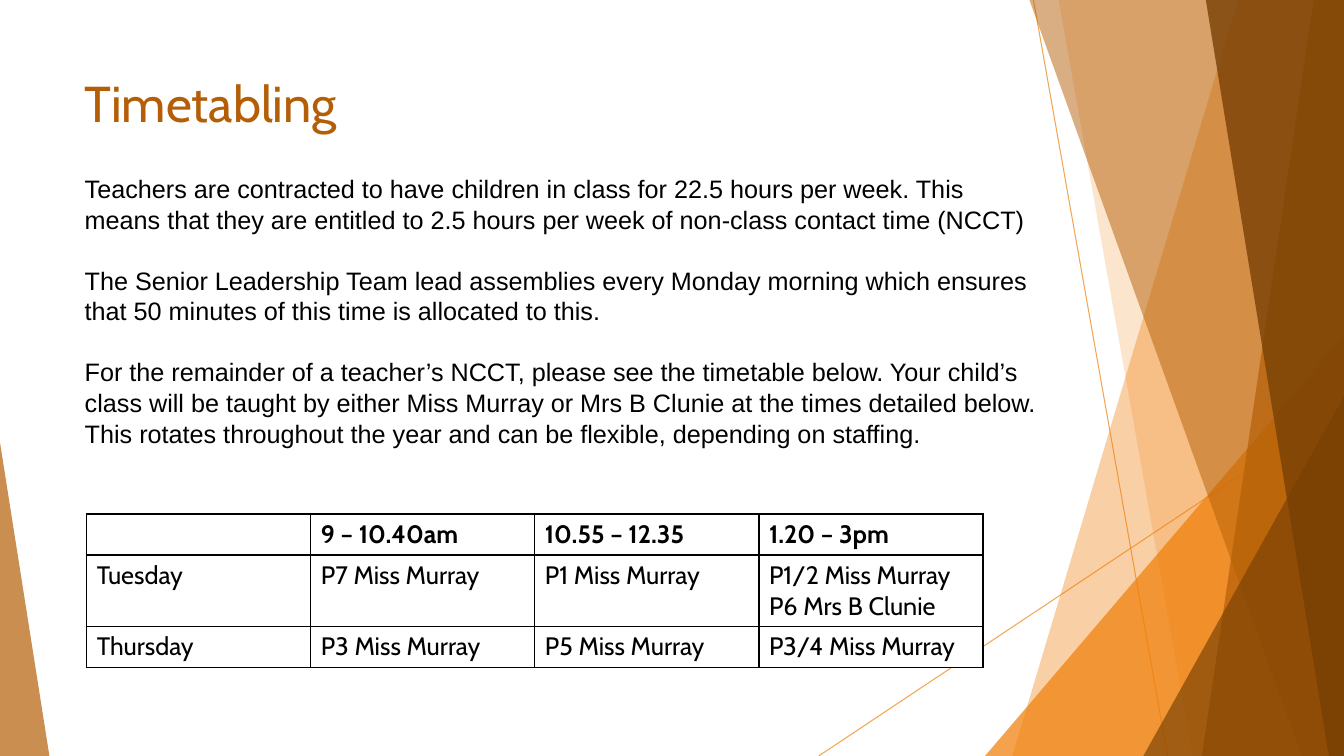
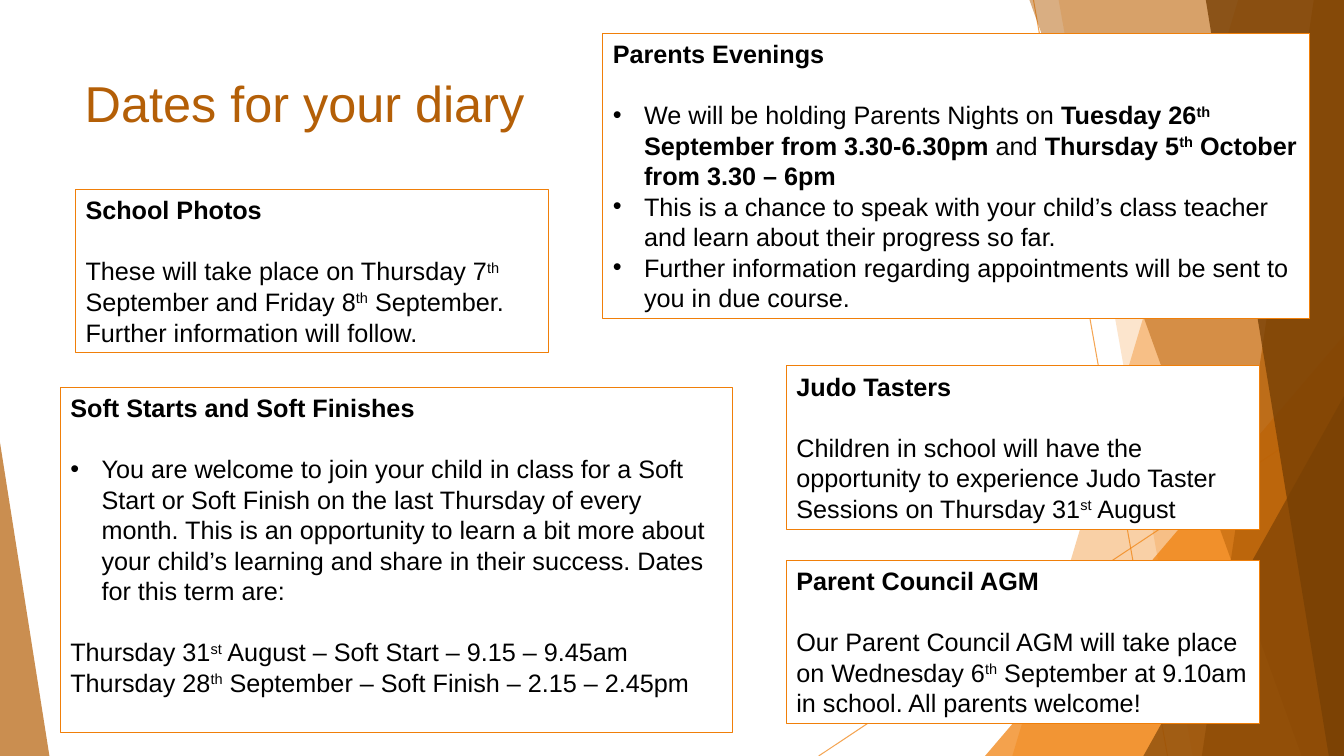
"""Build two school information slides: timetabling and diary dates."""
import lxml.etree
import pptx
import pptx.dml.color
import pptx.enum.shapes
import pptx.enum.text
import pptx.oxml.ns
import pptx.util

Inches = pptx.util.Inches
Pt = pptx.util.Pt
RGBColor = pptx.dml.color.RGBColor
qn = pptx.oxml.ns.qn

ORANGE = RGBColor(0xF0, 0x7F, 0x09)
RUST = RGBColor(0xB4, 0x5F, 0x07)
BROWN = RGBColor(0x78, 0x40, 0x04)
BLACK = RGBColor(0, 0, 0)
WHITE = RGBColor(0xFF, 0xFF, 0xFF)
WIDTH, HEIGHT = 13.33, 7.5
TEXT_SIZE = Pt(18)
LINE_HEIGHT = Pt(21.8)


def set_opacity(shape, percent):
    """Make every explicit colour of the shape translucent."""
    for colour in shape.element.xpath(".//a:srgbClr"):
        lxml.etree.SubElement(colour, qn("a:alpha"), val=str(percent * 1000))


def write_paragraphs(frame, paragraphs):
    """Write (text, gap, bullet) items; *...* is bold and ^...^ superscript."""
    frame.word_wrap = True
    frame.auto_size = pptx.enum.text.MSO_AUTO_SIZE.NONE
    frame.vertical_anchor = pptx.enum.text.MSO_ANCHOR.TOP
    for index, (text, gap, bullet) in enumerate(paragraphs):
        para = frame.add_paragraph() if index else frame.paragraphs[0]
        para.alignment = pptx.enum.text.PP_ALIGN.LEFT
        para.line_spacing = LINE_HEIGHT
        para.space_before = LINE_HEIGHT if gap else Pt(0)
        indent = Inches(0.31) if bullet else 0
        properties = para._p.get_or_add_pPr()
        properties.set("marL", str(indent))
        properties.set("indent", str(-indent))
        if bullet:
            lxml.etree.SubElement(properties, qn("a:buFont"), typeface="Arial")
            lxml.etree.SubElement(properties, qn("a:buChar"), char="•")
        else:
            lxml.etree.SubElement(properties, qn("a:buNone"))
        for bold, part in enumerate(text.split("*")):
            for raised, piece in enumerate(part.split("^")):
                if not piece:
                    continue
                span = para.add_run()
                span.text = piece
                span.font.name = "Arial"
                span.font.size = TEXT_SIZE
                span.font.color.rgb = BLACK
                span.font.bold = bold % 2 == 1
                if raised % 2:
                    span.font._element.set("baseline", "30000")


deck = pptx.Presentation()
deck.slide_width = Inches(WIDTH)
deck.slide_height = Inches(HEIGHT)
timetable_page = deck.slides.add_slide(deck.slide_layouts[1])
diary_page = deck.slides.add_slide(deck.slide_layouts[5])

decorations = []
for start_x, start_y, end_x, end_y in [
    (10.25, 0, 11.58, HEIGHT),
    (WIDTH, 4.03, 8.12, HEIGHT),
]:
    ray = timetable_page.shapes.add_connector(
        pptx.enum.shapes.MSO_CONNECTOR.STRAIGHT,
        Inches(start_x), Inches(start_y), Inches(end_x), Inches(end_y))
    ray.line.color.rgb = ORANGE
    ray.line.width = Pt(0.75)
    set_opacity(ray, 70)
    lxml.etree.SubElement(ray.element.spPr, qn("a:effectLst"))
    decorations.append(ray)

for kind, geometry, colour, opacity in [
    ("band", (12.28, 10.04), ORANGE, 36),
    ("band", (10.5, 11.83), ORANGE, 20),
    ("triangle", (9.77, 3.33, 3.56, 1), ORANGE, 72),
    ("band", (10.21, 12.91), RUST, 50),
    ("band", (13.03, 11.92), RUST, 70),
    ("band", (11.96, 13.18), BROWN, 80),
    ("triangle", (11.34, 3.93, 1.99, 1), BROWN, 66),
    ("triangle", (0, 4.39, 0.49, 0), RUST, 70),
]:
    if kind == "band":
        top_x, bottom_x = geometry
        builder = timetable_page.shapes.build_freeform(Inches(top_x), 0)
        builder.add_line_segments([
            (Inches(WIDTH), 0),
            (Inches(WIDTH), Inches(HEIGHT)),
            (Inches(bottom_x), Inches(HEIGHT)),
        ], close=True)
        panel = builder.convert_to_shape()
    else:
        left, top, width, peak = geometry
        panel = timetable_page.shapes.add_shape(
            pptx.enum.shapes.MSO_SHAPE.ISOSCELES_TRIANGLE,
            Inches(left), Inches(top), Inches(width), Inches(HEIGHT - top))
        panel.adjustments[0] = peak
    panel.shadow.inherit = False
    panel.line.fill.background()
    panel.fill.solid()
    panel.fill.fore_color.rgb = colour
    set_opacity(panel, opacity)
    decorations.append(panel)

for number, decoration in enumerate(decorations):
    decoration.element.xpath(".//p:cNvPr")[0].set("id", str(100 + number))
    deck.slide_master.shapes.element.insert(2 + number, decoration.element)

for page, heading, font_name, height in [
    (timetable_page, "Timetabling", "Cabin", 1.0),
    (diary_page, "Dates for your diary", "Arial", 1.03),
]:
    title = page.shapes.title
    title.left, title.top = Inches(0.74), Inches(0.67)
    title.width, title.height = Inches(9.4), Inches(height)
    frame = title.text_frame
    frame.text = heading
    frame.auto_size = pptx.enum.text.MSO_AUTO_SIZE.NONE
    frame.vertical_anchor = pptx.enum.text.MSO_ANCHOR.TOP
    frame.paragraphs[0].alignment = pptx.enum.text.PP_ALIGN.LEFT
    span = frame.paragraphs[0].runs[0]
    span.font.name = font_name
    span.font.size = Pt(36)
    span.font.color.rgb = RUST

body = timetable_page.placeholders[1]
body.left, body.top = Inches(0.74), Inches(1.67)
body.width, body.height = Inches(9.65), Inches(2.83)
write_paragraphs(body.text_frame, [
    ("Teachers are contracted to have children in class for 22.5 hours per week. "
     "This means that they are entitled to 2.5 hours per week of non-class "
     "contact time (NCCT)", False, False),
    ("The Senior Leadership Team lead assemblies every Monday morning which "
     "ensures that 50 minutes of this time is allocated to this.", True, False),
    ("For the remainder of a teacher’s NCCT, please see the timetable below. "
     "Your child’s class will be taught by either Miss Murray or Mrs B Clunie at "
     "the times detailed below. This rotates throughout the year and can be "
     "flexible, depending on staffing.", True, False),
])

lessons = [
    ["", "9 – 10.40am", "10.55 – 12.35", "1.20 – 3pm"],
    ["Tuesday", "P7 Miss Murray", "P1 Miss Murray", "P1/2 Miss Murray\nP6 Mrs B Clunie"],
    ["Thursday", "P3 Miss Murray", "P5 Miss Murray", "P3/4 Miss Murray"],
]
timetable = timetable_page.shapes.add_table(
    len(lessons), len(lessons[0]),
    Inches(0.86), Inches(5.1), Inches(8.89), Inches(1.51)).table
timetable.first_row = False
timetable.horz_banding = False
for row_index, lesson_row in enumerate(lessons):
    timetable.rows[row_index].height = Inches(0.7 if row_index == 1 else 0.4)
    for column_index, lesson in enumerate(lesson_row):
        cell = timetable.cell(row_index, column_index)
        cell.text_frame.text = lesson
        for para in cell.text_frame.paragraphs:
            para.font.size = TEXT_SIZE
            for span in para.runs:
                span.font.name = "Cabin"
                span.font.size = TEXT_SIZE
                span.font.bold = row_index == 0
                span.font.color.rgb = BLACK
        properties = cell._tc.get_or_add_tcPr()
        for edge in ("a:lnL", "a:lnR", "a:lnT", "a:lnB"):
            border = lxml.etree.SubElement(properties, qn(edge), w=str(Pt(1)))
            fill = lxml.etree.SubElement(border, qn("a:solidFill"))
            lxml.etree.SubElement(fill, qn("a:srgbClr"), val=str(BLACK))
        cell.fill.solid()
        cell.fill.fore_color.rgb = WHITE

notices = [
    ((0.6, 3.84, 6.67, 3.43), "Soft Starts and Soft Finishes", [
        ("You are welcome to join your child in class for a Soft Start or Soft "
         "Finish on the last Thursday of every month. This is an opportunity to "
         "learn a bit more about your child’s learning and share in their "
         "success. Dates for this term are:", True, True),
        ("Thursday 31^st^ August – Soft Start – 9.15 – 9.45am", True, False),
        ("Thursday 28^th^ September – Soft Finish – 2.15 – 2.45pm", False, False),
    ]),
    ((5.98, 0.33, 7.01, 2.83), "Parents Evenings", [
        ("We will be holding Parents Nights on *Tuesday 26^th^ September from "
         "3.30-6.30pm *and *Thursday 5^th^ October from 3.30 – 6pm*", True, True),
        ("This is a chance to speak with your child’s class teacher and learn "
         "about their progress so far.", False, True),
        ("Further information regarding appointments will be sent to you in due "
         "course.", False, True),
    ]),
    ((7.8, 3.63, 4.69, 1.62), "Judo Tasters", [
        ("Children in school will have the opportunity to experience Judo Taster "
         "Sessions on Thursday 31^st^ August", True, False),
    ]),
    ((7.8, 5.56, 4.69, 1.62), "Parent Council AGM", [
        ("Our Parent Council AGM will take place on Wednesday 6^th^ September at "
         "9.10am in school. All parents welcome!", True, False),
    ]),
    ((0.75, 1.88, 4.69, 1.62), "School Photos", [
        ("These will take place on Thursday 7^th^ September and Friday 8^th^ "
         "September. Further information will follow.", True, False),
    ]),
]
for position, heading, paragraphs in notices:
    box = diary_page.shapes.add_shape(
        pptx.enum.shapes.MSO_SHAPE.RECTANGLE, *map(Inches, position))
    box.shadow.inherit = False
    box.fill.solid()
    box.fill.fore_color.rgb = WHITE
    box.line.color.rgb = ORANGE
    box.line.width = Pt(0.75)
    write_paragraphs(box.text_frame, [(f"*{heading}*", False, False)] + paragraphs)

deck.save("out.pptx")
